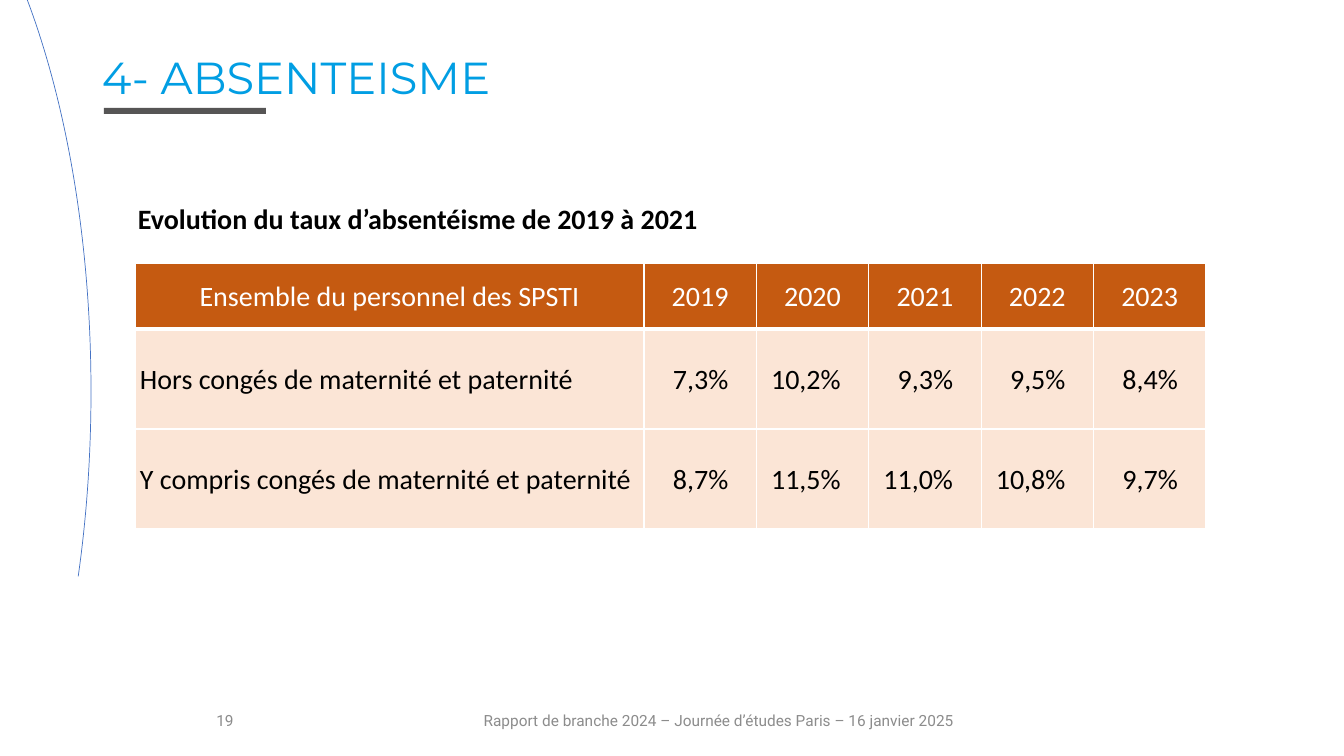
from lxml import etree
from pptx import Presentation
from pptx import util as u
from pptx.dml.color import RGBColor
from pptx.enum import shapes, text
from pptx.oxml.ns import qn

BLUE = RGBColor(0x01, 0x9E, 0xE3)
CURVE = RGBColor(0x44, 0x72, 0xC4)
DARK = RGBColor(0x56, 0x55, 0x55)
GREY = RGBColor(0x8C, 0x8C, 0x8C)
RUST = RGBColor(0xC5, 0x5A, 0x11)
PEACH = RGBColor(0xFB, 0xE5, 0xD6)
WHITE = RGBColor(0xFF, 0xFF, 0xFF)
BLACK = RGBColor(0, 0, 0)

TITLE = "4- ABSENTEISME"
HEAD = "Evolution du taux d’absentéisme de 2019 à 2021"
PAGE = "19"
FOOT = "Rapport de branche 2024 – Journée d’études Paris – 16 janvier 2025"
ROWS = [
    ("Ensemble du personnel des SPSTI", "2019", "2020", "2021", "2022", "2023"),
    ("Hors congés de maternité et paternité", "7,3%", "10,2%", "9,3%", "9,5%", "8,4%"),
    ("Y compris congés de maternité et paternité", "8,7%", "11,5%", "11,0%", "10,8%", "9,7%"),
]
LEFT, TOP, WIDE = 135, 263, 1071
LABEL = 509
HIGH = (66, 100, 100)
SIDE, GAP = 5, 28

ALIGN = text.PP_ALIGN
MID = text.MSO_ANCHOR.MIDDLE


def px(n):
    return u.Emu(round(n * 914400 / 100.8))


def style(par, size, font, color, bold=False):
    face = par.runs[0].font
    face.size, face.name, face.bold = u.Pt(size), font, bold
    face.color.rgb = color


def label(box, words, size, font, color, bold=False):
    frame = slide.shapes.add_textbox(*map(px, box)).text_frame
    frame.word_wrap = True
    frame.text = words
    par = frame.paragraphs[0]
    style(par, size, font, color, bold)
    return frame, par


def edge(cell, tag, width):
    line = etree.SubElement(cell._tc.get_or_add_tcPr(), qn("a:" + tag), w=str(u.Pt(width)))
    fill = etree.SubElement(line, qn("a:solidFill"))
    etree.SubElement(fill, qn("a:srgbClr"), val=str(WHITE))


def fill_cell(cell, words, row, col):
    top, value = row == 0, row > 0 and col > 0
    for tag in ("lnL", "lnR", "lnT", "lnB"):
        edge(cell, tag, 3 if top and tag == "lnB" else 1)
    cell.fill.solid()
    cell.fill.fore_color.rgb = RUST if top else PEACH
    cell.vertical_anchor = MID
    cell.margin_left = px(SIDE)
    cell.margin_right = px(GAP if value else SIDE)
    cell.margin_top = cell.margin_bottom = 0
    cell.text = words
    par = cell.text_frame.paragraphs[0]
    par.alignment = ALIGN.CENTER if top else ALIGN.RIGHT if value else ALIGN.LEFT
    par.line_spacing, par.space_after = 1.07, u.Pt(8)
    style(par, 20, "Calibri", WHITE if top else BLACK)


deck = Presentation()
deck.slide_width, deck.slide_height = px(1344), px(756)
slide = deck.slides.add_slide(deck.slide_layouts[6])

bar = slide.shapes.add_shape(shapes.MSO_SHAPE.RECTANGLE, *map(px, (104, 108, 162, 6)))
bar.shadow.inherit = False
bar.fill.solid()
bar.fill.fore_color.rgb = DARK
bar.line.fill.background()

arc = slide.shapes.add_shape(shapes.MSO_SHAPE.ARC, *map(px, (-446, -214, 537, 1211)))
arc.shadow.inherit = False
arc.adjustments[0], arc.adjustments[1] = 178.34 * 0.6, 35.857 * 0.6
arc.fill.background()
arc.line.color.rgb = CURVE
arc.line.width = u.Pt(0.5)

for box, words in (((74, 700, 302, 40), PAGE), ((434, 700, 570, 40), FOOT)):
    frame, par = label(box, words, 11, "Roboto", GREY)
    frame.vertical_anchor = MID
    par.alignment = ALIGN.CENTER

frame, par = label((92, 51, 893, 60), TITLE, 32, "Montserrat", BLUE)
par.line_spacing, par.space_before = 0.9, u.Pt(10)
frame, par = label((128, 197, 995, 60), HEAD, 20, "Calibri", BLACK, True)
par.space_before = u.Pt(4)

count = len(ROWS[0])
grid = slide.shapes.add_table(len(ROWS), count, *map(px, (LEFT, TOP, WIDE, sum(HIGH)))).table
for col in range(count):
    grid.columns[col].width = px((WIDE - LABEL) / (count - 1) if col else LABEL)
for row, cells in enumerate(ROWS):
    grid.rows[row].height = px(HIGH[row])
    for col, words in enumerate(cells):
        fill_cell(grid.cell(row, col), words, row, col)

deck.save("out.pptx")
